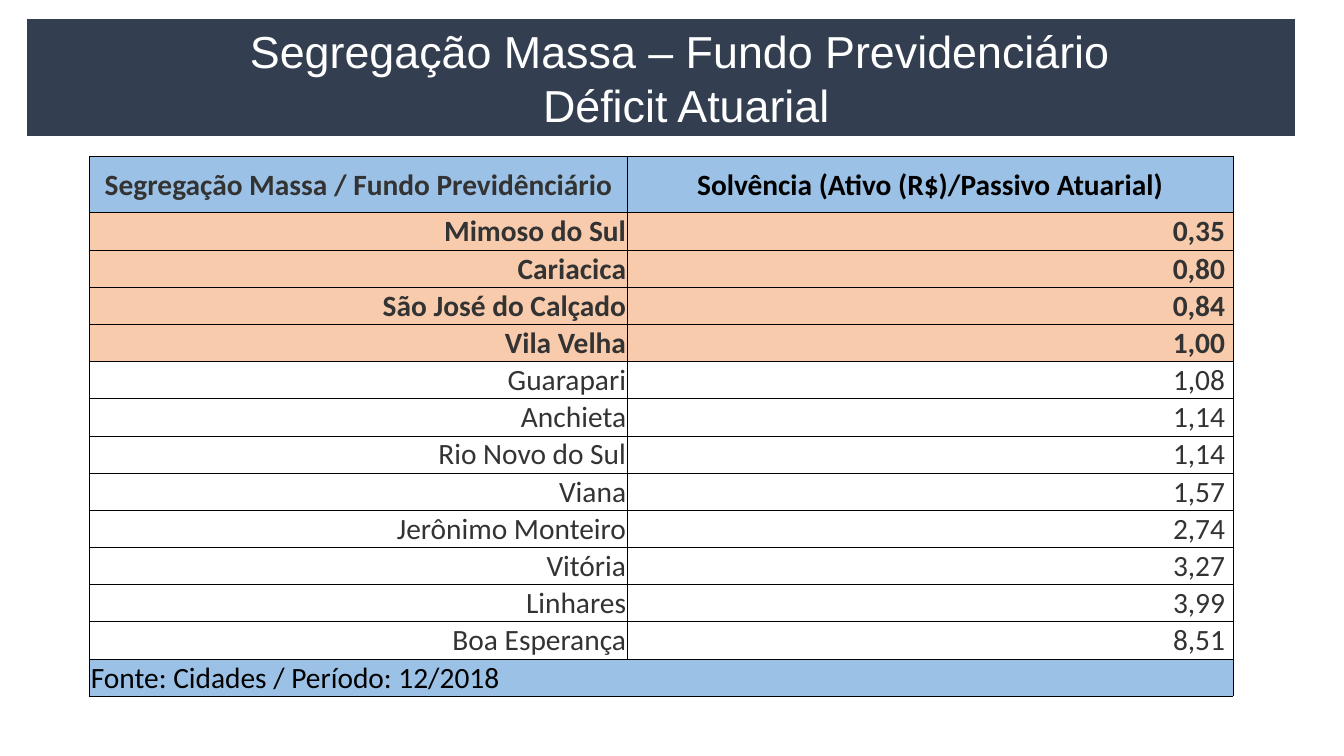
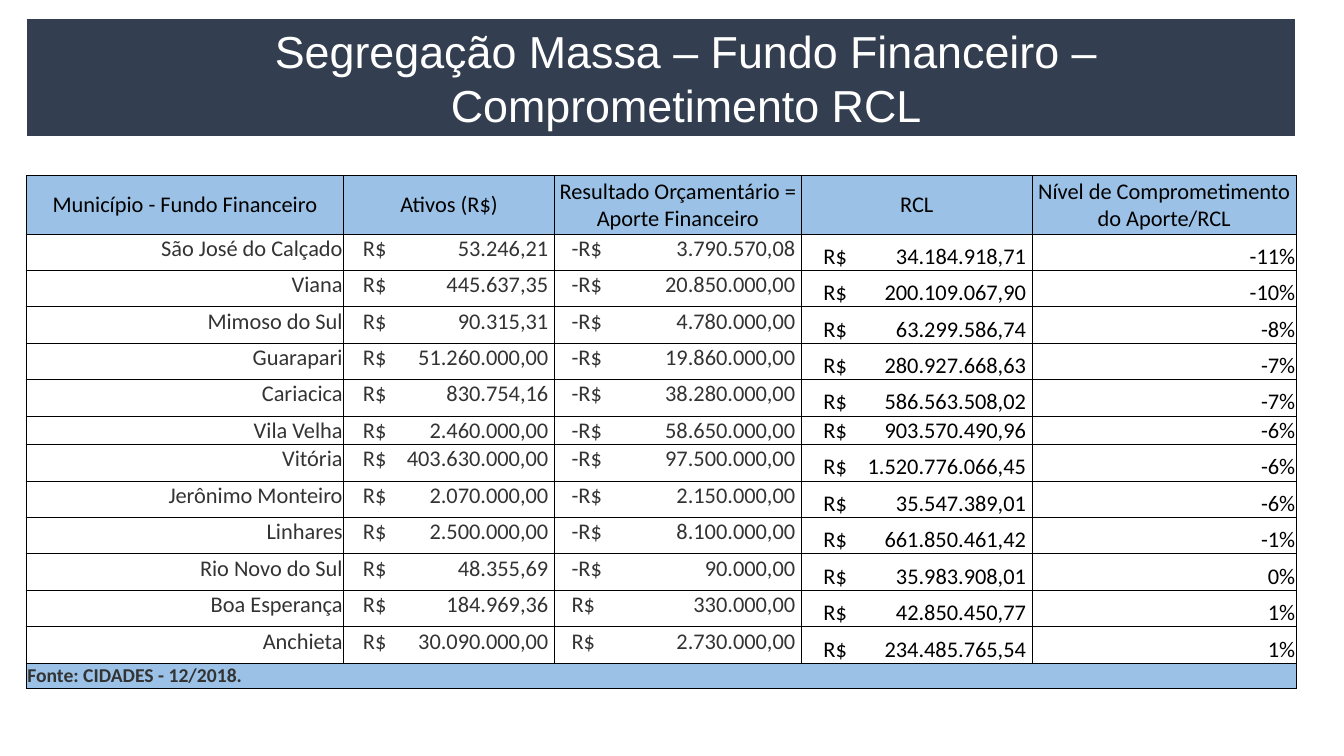
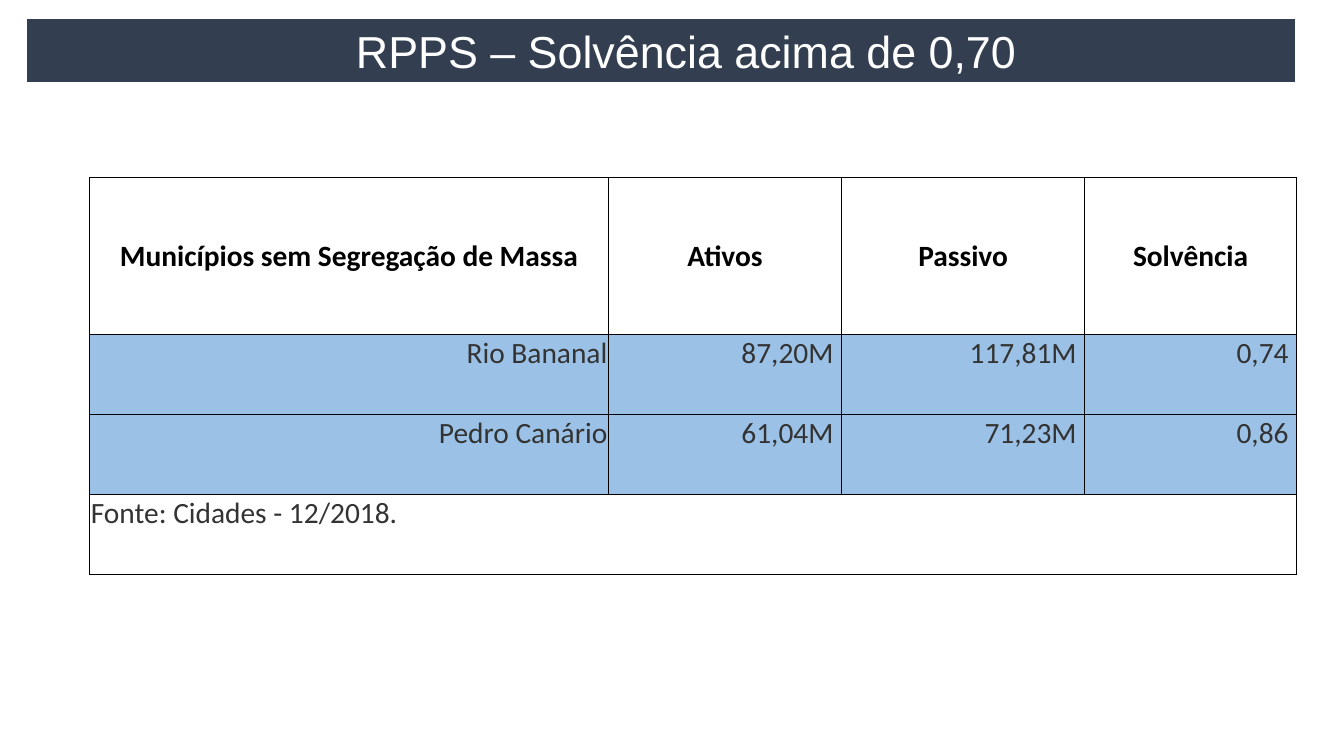
"""Build three slides of municipal pension fund tables."""
import dataclasses

import lxml.etree
import pptx
import pptx.dml.color
import pptx.enum.shapes
import pptx.enum.text
import pptx.oxml.ns
import pptx.util

WIDE = pptx.util.Inches(13.33)
HIGH = pptx.util.Inches(7.5)
ALIGN = pptx.enum.text.PP_ALIGN
ANCHOR = pptx.enum.text.MSO_ANCHOR
qn = pptx.oxml.ns.qn


@dataclasses.dataclass(frozen=True)
class Theme:
    navy: str = "333F50"
    blue: str = "9BC2E6"
    peach: str = "F8CBAD"
    white: str = "FFFFFF"
    black: str = "000000"
    gray: str = "333333"
    title: int = 32
    large: int = 21
    mid: int = 16
    small: int = 14
    head: str = "Arial"
    body: str = "Calibri"
    frame: float = 1.5
    rule: float = 0.5


THEME = Theme()
BASE = dict(fill=THEME.white, ink=THEME.gray, size=THEME.large, bold=False,
            align=ALIGN.RIGHT, anchor=ANCHOR.TOP, left=0.08, right=0.08)
HEAD = BASE | dict(fill=THEME.blue, ink=THEME.black, align=ALIGN.CENTER,
                   anchor=ANCHOR.MIDDLE)
NOTE = BASE | dict(fill=THEME.blue, align=ALIGN.LEFT)
VALUE = BASE | dict(right=0.6)
MARGIN = 1.95
INDENT = 6.68
SPAN = 94.5

FUNDS = [
    ("Mimoso do Sul", "0,35"), ("Cariacica", "0,80"),
    ("São José do Calçado", "0,84"), ("Vila Velha", "1,00"),
    ("Guarapari", "1,08"), ("Anchieta", "1,14"),
    ("Rio Novo do Sul", "1,14"), ("Viana", "1,57"),
    ("Jerônimo Monteiro", "2,74"), ("Vitória", "3,27"),
    ("Linhares", "3,99"), ("Boa Esperança", "8,51"),
]
COSTS = [
    ("São José do Calçado", "53.246,21", "-3.790.570,08", "34.184.918,71", "-11%"),
    ("Viana", "445.637,35", "-20.850.000,00", "200.109.067,90", "-10%"),
    ("Mimoso do Sul", "90.315,31", "-4.780.000,00", "63.299.586,74", "-8%"),
    ("Guarapari", "51.260.000,00", "-19.860.000,00", "280.927.668,63", "-7%"),
    ("Cariacica", "830.754,16", "-38.280.000,00", "586.563.508,02", "-7%"),
    ("Vila Velha", "2.460.000,00", "-58.650.000,00", "903.570.490,96", "-6%"),
    ("Vitória", "403.630.000,00", "-97.500.000,00", "1.520.776.066,45", "-6%"),
    ("Jerônimo Monteiro", "2.070.000,00", "-2.150.000,00", "35.547.389,01", "-6%"),
    ("Linhares", "2.500.000,00", "-8.100.000,00", "661.850.461,42", "-1%"),
    ("Rio Novo do Sul", "48.355,69", "-90.000,00", "35.983.908,01", "0%"),
    ("Boa Esperança", "184.969,36", "330.000,00", "42.850.450,77", "1%"),
    ("Anchieta", "30.090.000,00", "2.730.000,00", "234.485.765,54", "1%"),
]
PLAIN = [
    ("Rio Bananal", "87,20M", "117,81M", "0,74"),
    ("Pedro Canário", "61,04M", "71,23M", "0,86"),
]


def across(part):
    """Turn a percentage of the slide's width into a length."""
    return pptx.util.Emu(round(WIDE * part / 100))


def down(part):
    """Turn a percentage of the slide's height into a length."""
    return pptx.util.Emu(round(HIGH * part / 100))


def tint(code):
    """Turn a hex code into a colour."""
    return pptx.dml.color.RGBColor.from_string(code)


def apply(item, values):
    """Set each named value on an item."""
    for name, value in values.items():
        setattr(item, name, value)


def paint(item, code):
    """Give an item a solid fill."""
    item.fill.solid()
    item.fill.fore_color.rgb = tint(code)


def write(para, text, face, size, ink, bold=False):
    """Add one formatted run to a paragraph."""
    run = para.add_run()
    run.text = text
    apply(run.font, dict(name=face, size=pptx.util.Pt(size), bold=bold))
    run.font.color.rgb = tint(ink)


def banner(slide, lines, tall):
    """Draw the title band with one paragraph for each line."""
    band = slide.shapes.add_shape(
        pptx.enum.shapes.MSO_SHAPE.RECTANGLE,
        across(MARGIN), down(2.4), across(SPAN), down(tall))
    band.shadow.inherit = False
    paint(band, THEME.navy)
    band.line.color.rgb = tint(THEME.white)
    band.line.width = pptx.util.Pt(THEME.frame)
    frame = band.text_frame
    apply(frame, dict(word_wrap=True, vertical_anchor=ANCHOR.MIDDLE))
    for spot, line in enumerate(lines):
        para = frame.add_paragraph() if spot else frame.paragraphs[0]
        apply(para, dict(alignment=ALIGN.CENTER, level=1))
        props = para._p.get_or_add_pPr()
        apply_xml(props, dict(marL=pptx.util.Inches(0.5), indent=0))
        write(para, line, THEME.head, THEME.title, THEME.white)


def apply_xml(node, values):
    """Set each named value as an attribute of an XML node."""
    for name, value in values.items():
        node.set(name, str(int(value)))


def edge(cell):
    """Rule all four sides of a cell."""
    props = cell._tc.get_or_add_tcPr()
    for side in ("a:lnL", "a:lnR", "a:lnT", "a:lnB"):
        line = lxml.etree.SubElement(props, qn(side))
        apply_xml(line, dict(w=pptx.util.Pt(THEME.rule)))
        fill = lxml.etree.SubElement(line, qn("a:solidFill"))
        lxml.etree.SubElement(fill, qn("a:srgbClr")).set("val", THEME.black)


def stop(para, place):
    """Add a right tab stop to a paragraph."""
    tabs = lxml.etree.SubElement(para._p.get_or_add_pPr(), qn("a:tabLst"))
    tab = lxml.etree.SubElement(tabs, qn("a:tab"))
    apply_xml(tab, dict(pos=place))
    tab.set("algn", "r")


def fill_cell(cell, text, look, wide):
    """Format a cell and write its text."""
    apply(cell, dict(
        margin_left=across(look["left"]), margin_right=across(0.08 if "\t" in text else look["right"]),
        margin_top=across(0.08), margin_bottom=0,
        vertical_anchor=look["anchor"]))
    para = cell.text_frame.paragraphs[0]
    para.alignment = look["align"]
    if "\t" in text:
        stop(para, wide - across(look["left"] + look["right"]))
    write(para, text, THEME.body, look["size"], look["ink"], look["bold"])


def grid(slide, box, parts, tall, rows):
    """Draw a table whose one-cell rows span all columns."""
    left, top, wide = box
    table = slide.shapes.add_table(
        len(rows), len(parts), across(left), down(top), across(wide),
        down(sum(tall))).table
    apply(table, dict(first_row=False, horz_banding=False))
    for col, part in zip(table.columns, parts):
        col.width = across(wide * part / sum(parts))
    for spot, (row, high) in enumerate(zip(rows, tall)):
        table.rows[spot].height = down(high)
        cells = list(table.rows[spot].cells)
        for cell in cells:
            edge(cell)
            paint(cell, row[0][1]["fill"])
        if len(row) == 1:
            cells[0].merge(cells[-1])
        for cell, col, (text, look) in zip(cells, table.columns, row):
            fill_cell(cell, text, look, col.width)


def pair(texts, looks):
    """Match each text of a row with its look."""
    return list(zip(texts, looks))


def money(value):
    """Put the currency sign and a tab before an amount."""
    sign = "-" if value.startswith("-") else ""
    return f"{sign}R$\t{value.lstrip('-')}"


def solvent(slide):
    """Fill the slide on the solvency of pension funds."""
    banner(slide, ["Segregação Massa – Fundo Previdenciário ",
                   "Déficit Atuarial"], 15.73)
    bold = HEAD | dict(bold=True)
    rows = [pair(("Segregação Massa / Fundo Previdênciário",
                  "Solvência (Ativo (R$)/Passivo Atuarial)"),
                 (bold | dict(ink=THEME.gray), bold))]
    for spot, fund in enumerate(FUNDS):
        mark = dict(fill=THEME.peach, bold=True) if spot < 4 else {}
        rows.append(pair(fund, (BASE | mark, VALUE | mark)))
    rows.append([("Fonte: Cidades / Período: 12/2018",
                  NOTE | dict(ink=THEME.black, anchor=ANCHOR.BOTTOM))])
    grid(slide, (INDENT, 20.67, 85.07), (5.33, 6.01),
         [7.47] + [4.92] * 13, rows)


def burden(slide):
    """Fill the slide on the share of revenue taken by the funds."""
    banner(slide, ["Segregação Massa – Fundo Financeiro – Comprometimento RCL"],
           15.73)
    size = dict(size=THEME.mid)
    cash = BASE | size | dict(align=ALIGN.LEFT, left=1.43, right=0.45)
    low = dict(ink=THEME.black, anchor=ANCHOR.BOTTOM)
    looks = (BASE | size, cash, cash | dict(left=1.28),
             cash | low | dict(left=1.65), BASE | size | low)
    heads = ("Município - Fundo Financeiro", "Ativos (R$)",
             "Resultado Orçamentário = Aporte Financeiro", "RCL",
             "Nível de Comprometimento do Aporte/RCL")
    rows = [pair(heads, [HEAD | size] * 5)]
    for town, *sums, rate in COSTS:
        rows.append(pair((town, *map(money, sums), rate), looks))
    rows.append([("Fonte: CIDADES - 12/2018.",
                  NOTE | dict(size=THEME.small, bold=True))])
    tall = [7.73] + [3.73 if cost[0] == "Vila Velha" else 4.82
                     for cost in COSTS] + [3.25]
    grid(slide, (MARGIN, 23.2, SPAN), (3.15, 2.09, 2.45, 2.29, 2.62),
         tall, rows)


def sound(slide):
    """Fill the slide on towns with solvency above the mark."""
    banner(slide, ["RPPS – Solvência acima de 0,70"], 8.53)
    head = HEAD | dict(fill=THEME.white, bold=True)
    blue = dict(fill=THEME.blue)
    rows = [pair(("Municípios sem Segregação de Massa", "Ativos", "Passivo",
                  "Solvência"), [head] * 4)]
    rows += [pair(town, [BASE | blue] + [VALUE | blue] * 3) for town in PLAIN]
    rows.append([("Fonte: Cidades - 12/2018.",
                  NOTE | dict(fill=THEME.white))])
    grid(slide, (INDENT, 23.47, 89.8), (5.14, 2.31, 2.41, 2.1),
         [20.8] + [10.58] * 3, rows)


def main():
    """Build and save the slides."""
    deck = pptx.Presentation()
    apply(deck, dict(slide_width=WIDE, slide_height=HIGH))
    for build in (solvent, burden, sound):
        build(deck.slides.add_slide(deck.slide_layouts[6]))
    deck.save("out.pptx")


if __name__ == "__main__":
    main()
